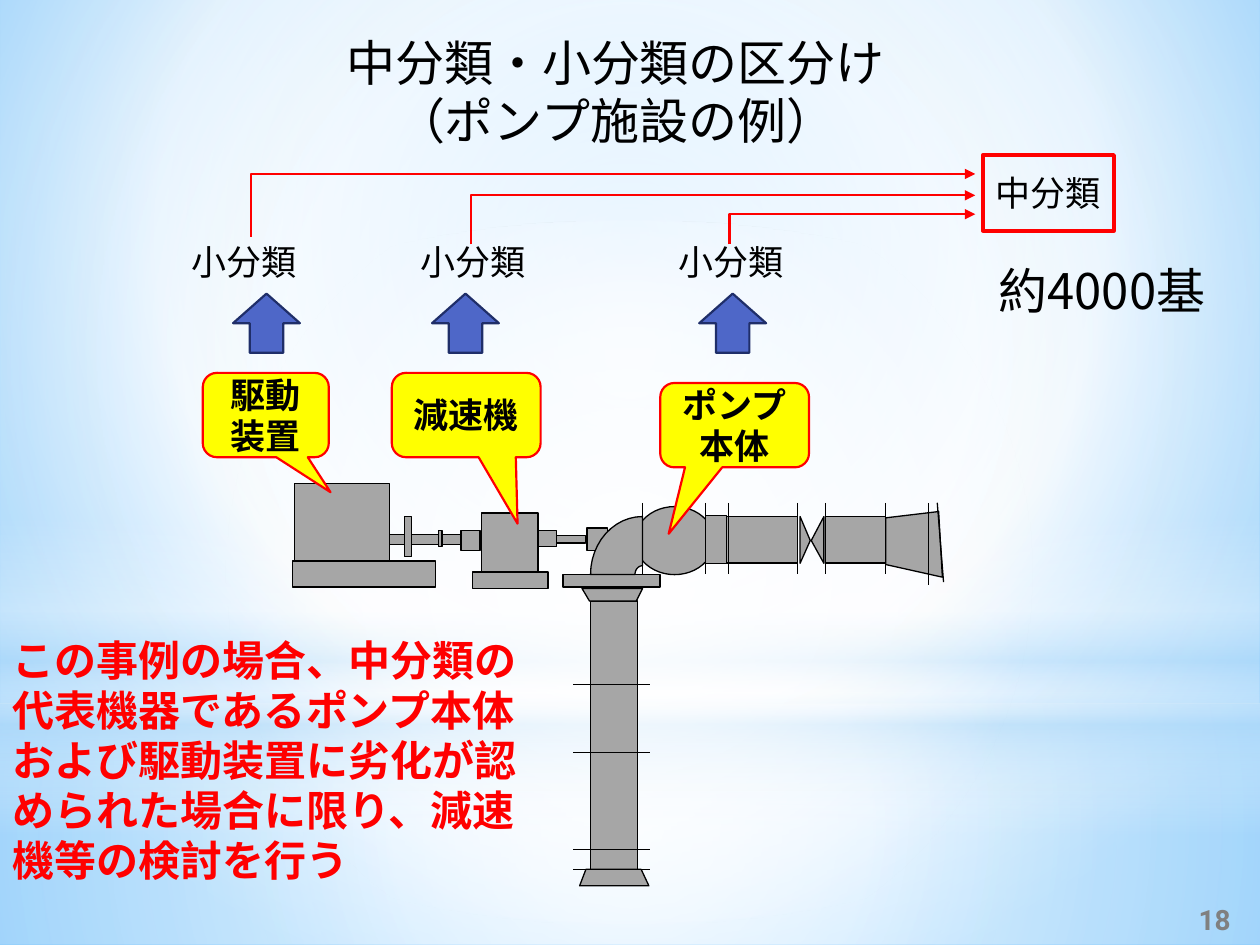
from math import cos, pi, sin

from pptx import Presentation
from pptx.dml.color import RGBColor
from pptx.enum.shapes import MSO_CONNECTOR, MSO_SHAPE
from pptx.enum.text import MSO_ANCHOR, PP_ALIGN
from pptx.oxml.ns import qn
from pptx.util import Pt
from lxml.etree import SubElement

FONT = "Noto Sans CJK JP"
RED, BLACK, GREY = "FF0000", "000000", "A6A6A6"


def rgb(value):
    return RGBColor.from_string(value)


def paint(sp, fill, line, width):
    sp.shadow.inherit = False
    if fill:
        sp.fill.solid()
        sp.fill.fore_color.rgb = rgb(fill)
    else:
        sp.fill.background()
    if line:
        sp.line.color.rgb = rgb(line)
        sp.line.width = Pt(width)
    else:
        sp.line.fill.background()


def shape(s, kind, box, fill=None, line=None, width=1.25):
    sp = s.shapes.add_shape(kind, *map(Pt, box))
    paint(sp, fill, line, width)
    return sp


def polygon(s, points, fill, line, width, close=True):
    start, *rest = [(Pt(x), Pt(y)) for x, y in points]
    fb = s.shapes.build_freeform(*start)
    fb.add_line_segments(rest, close=close)
    sp = fb.convert_to_shape()
    paint(sp, fill, line, width)
    return sp


def rule(s, x1, y1, x2, y2):
    ln = s.shapes.add_connector(MSO_CONNECTOR.STRAIGHT, *map(Pt, (x1, y1, x2, y2)))
    ln.line.color.rgb = rgb(BLACK)
    ln.line.width = Pt(0.75)
    SubElement(ln._element.spPr, qn("a:effectLst"))


def write(sp, lines, size, color=BLACK, bold=False, name=FONT,
          align=PP_ALIGN.CENTER, anchor=MSO_ANCHOR.MIDDLE, wrap=True):
    tf = sp.text_frame
    tf.word_wrap = wrap
    tf.vertical_anchor = anchor
    for i, text in enumerate(lines):
        p = tf.add_paragraph() if i else tf.paragraphs[0]
        p.alignment = align
        p.line_spacing = Pt(round(size * 1.19, 1))
        r = p.add_run()
        r.text = text
        r.font.color.rgb = rgb(color)
        for key, value in {"size": Pt(size), "bold": bold, "name": name}.items():
            setattr(r.font, key, value)
        SubElement(r.font._element, qn("a:ea")).set("typeface", name)


def text_box(s, box, lines, size, **fmt):
    write(s.shapes.add_textbox(*map(Pt, box)), lines, size, **fmt)


def gradient(fill, root, stops, focus=None):
    fill.gradient()
    grad = root.find(".//" + qn("a:gradFill"))
    for child in list(grad):
        grad.remove(child)
    gs_list = SubElement(grad, qn("a:gsLst"))
    for pos, color, alpha in stops:
        gs = SubElement(gs_list, qn("a:gs"), pos=str(pos * 1000))
        clr = SubElement(gs, qn("a:srgbClr"), val=color)
        if alpha < 100:
            SubElement(clr, qn("a:alpha"), val=str(alpha * 1000))
    if focus:
        route = SubElement(grad, qn("a:path"))
        route.set("path", "circle")
        to = SubElement(route, qn("a:fillToRect"))
        for side, value in zip("ltrb", focus):
            to.set(side, str(value * 1000))
    else:
        SubElement(grad, qn("a:lin"), ang="5400000", scaled="0")


def backdrop(s, box):
    x, y, w, h = box
    white, sky, center = "FFFFFF", "B4DCFA", (50, 50, 50, 50)
    gradient(s.background.fill, s._element,
             [(0, "9ED5FF", 100), (60, white, 100), (100, "5BB9FF", 100)], (20, 10, 20, 60))
    horizon = 401.8
    layers = [
        (MSO_SHAPE.RECTANGLE, horizon, h - horizon,
         [(0, white, 91), (37, white, 76), (100, sky, 79)], center),
        (MSO_SHAPE.RECTANGLE, 0, horizon,
         [(0, white, 89), (48, white, 62), (100, sky, 79)], center),
        (MSO_SHAPE.RECTANGLE, 296.6, 180,
         [(0, white, 0), (29, white, 30), (45, sky, 40),
          (55, white, 26), (65, sky, 60), (100, white, 0)], None),
        (MSO_SHAPE.OVAL, 126, horizon, [(0, white, 100), (56, white, 0)], center),
    ]
    for kind, top, height, stops, focus in layers:
        sp = shape(s, kind, (x, y + top, w, height))
        gradient(sp.fill, sp._element, stops, focus)


def pump(s, box):
    x, y = box[:2]

    def arc(rx, ry, start, end):
        angles = [start + (end - start) * i / 12 for i in range(13)]
        return [(200.2 - rx * cos(a), 51.8 - ry * sin(a)) for a in angles]

    casing = (195.8, 13, 45.4, 38.9)
    blocks = [
        (247.7, 18.7, 41, 26.6), (304.6, 18.7, 34.6, 26.6), (154.8, 51.8, 55.4, 7.2),
        (170.6, 67, 26.6, 153.4), (236.2, 18, 12.2, 27.4), (168.5, 25.2, 11.5, 13),
        (103, 50.4, 43.2, 9.4), (96.5, 26.6, 10.8, 11.5), (25.2, 28.8, 71.3, 5.8),
        (0, 44, 82, 15), (1.4, 0, 54, 44), (64, 18.7, 4.3, 23), (83.5, 26.6, 2.2, 9.4),
        (108, 16.6, 32.4, 33.8), (146.9, 29.5, 20.9, 4.3), (140.4, 26.6, 10.8, 9.4),
    ]
    outlines = [
        [(339.1, 19.4), (369.4, 15.8), (371.5, 53.3), (339.1, 46.1)],
        [(303.8, 45.4), (296.6, 32.4), (303.8, 18.7)],
        [(290.2, 45.4), (296, 32.4), (290.2, 18.7)],
        [(165.6, 59.8), (169.9, 67), (196.6, 67), (200.2, 59.8)],
        [(164.2, 229.7), (167.8, 220.3), (199.4, 220.3), (203.8, 229.7)],
        arc(29.7, 33.1, 0, pi / 2) + arc(4.3, 5, pi / 2, 0),
    ]
    joints = [(jx, 10.8, jx, 51.8) for jx in (200.2, 236.2, 249.1, 288.7, 304.6, 339.1)]
    joints += [(363.6, 10.8, 363.6, 57.6), (368.6, 10.8, 372.2, 56.2)]
    joints += [(160.6, jy, 204.5, jy) for jy in (114.5, 153.4, 208.8, 220.3)]

    for kind, parts in ((MSO_SHAPE.OVAL, [casing]), (MSO_SHAPE.RECTANGLE, blocks)):
        for px, py, w, h in parts:
            shape(s, kind, (x + px, y + py, w, h), GREY, BLACK, 0.75)
    for points in outlines:
        polygon(s, [(x + px, y + py) for px, py in points], GREY, BLACK, 0.75)
    for x1, y1, x2, y2 in joints:
        rule(s, x + x1, y + y1, x + x2, y + y2)


def unit(s, box, name, tip, arrow_x, label_x, route):
    x, y, w, h = box
    sp = shape(s, MSO_SHAPE.ROUNDED_RECTANGULAR_CALLOUT, box, "FFFF00", RED)
    for i, value in enumerate((*tip, 0.167)):
        sp.adjustments[i] = value
    write(sp, [name], 20, bold=True)
    shape(s, MSO_SHAPE.UP_ARROW, (x + arrow_x, 167.8, 38.2, 33.8), "4E67C8", "1F2E69")
    text_box(s, (x + label_x, 133.9, 75, 31.7), ["小分類"], 20,
             wrap=False, anchor=MSO_ANCHOR.TOP)
    stem, bottom, top = route
    sp = polygon(s, [(x + stem, bottom), (x + stem, top), (557.3, top)],
                 None, RED, 1.25, close=False)
    SubElement(sp.line._get_or_add_ln(), qn("a:tailEnd"), type="triangle")


def group_label(s, box):
    x, y, w, h = box
    sp = shape(s, MSO_SHAPE.RECTANGLE, (x, y, 75, 43.2), None, RED, 2.25)
    write(sp, ["中分類"], 20, wrap=False)
    text_box(s, (x - 8.6, y + 56.9, w, 41), ["約4000基"], 28, anchor=MSO_ANCHOR.TOP)


def main():
    prs = Presentation()
    prs.slide_width, prs.slide_height = Pt(720), Pt(540)
    s = prs.slides.add_slide(prs.slide_layouts[6])
    backdrop(s, (0, 0, 720, 540))
    pump(s, (167, 276.5, 372, 230))
    text_box(s, (105.1, 15.1, 493.2, 74.9), ["中分類・小分類の区分け", "（ポンプ施設の例）"], 28,
             anchor=MSO_ANCHOR.TOP)
    units = [
        ((115.9, 213.1, 72, 48.2), "駆動装置", (0.514, 0.915), 17.3, -13.7, (27.4, 135.4, 99.4)),
        ((223.9, 213.1, 85, 48.2), "減速機", (0.345, 1.288), 23, 8.7, (45.4, 139.7, 111.6)),
        ((377.3, 218.9, 85, 48.2), "ポンプ本体", (-0.443, 1.288), 22.3, 2.9, (39.6, 139.7, 122.4)),
    ]
    for args in units:
        unit(s, *args)
    group_label(s, (561.6, 88.6, 153.4, 98))
    text_box(s, (0, 357.8, 323.3, 152.6),
             ["この事例の場合、中分類の代表機器であるポンプ本体および駆動装置に劣化が認められた場合に限り、減速機等の検討を行う"],
             24, color=RED, bold=True, align=PP_ALIGN.LEFT)
    text_box(s, (668.2, 511.2, 51.8, 28.8), ["18"], 16, color="808080", bold=True, name="Roboto")
    prs.save("out.pptx")


if __name__ == "__main__":
    main()
